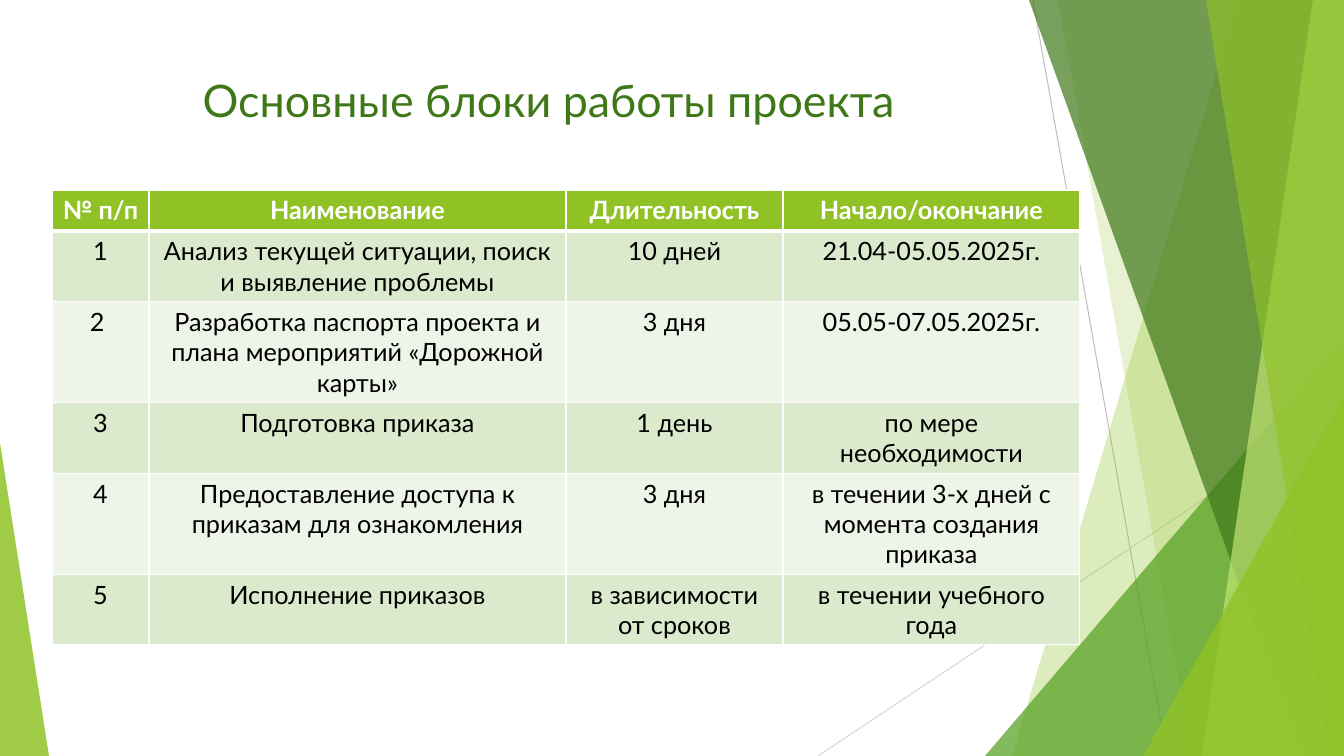
from lxml import etree
from pptx import Presentation
from pptx.dml.color import RGBColor
from pptx.enum.shapes import MSO_CONNECTOR, MSO_SHAPE
from pptx.enum.text import MSO_ANCHOR, MSO_AUTO_SIZE, PP_ALIGN
from pptx.oxml.ns import qn
from pptx.util import Pt

STRAIGHT = MSO_CONNECTOR.STRAIGHT
TRIANGLE = MSO_SHAPE.ISOSCELES_TRIANGLE
TOP = MSO_ANCHOR.TOP
NO_FIT = MSO_AUTO_SIZE.NONE
CENTER = PP_ALIGN.CENTER

SLIDE_WIDTH, SLIDE_HEIGHT = 1344, 756
SCALE = 12192000 / SLIDE_WIDTH
FONT = "Lato"
COLORS = {
    "lime": "90C226",
    "pale_lime": "C0E474",
    "green": "54A021",
    "dark_green": "3F7819",
    "odd_row": "DBE9CD",
    "even_row": "EEF4E8",
    "white": "FFFFFF",
    "black": "000000",
    "gray": "BFBFBF",
    "light_gray": "D9D9D9",
}

HEADERS = ["№ п/п", "Наименование", "Длительность", "Начало/окончание"]
STAGES = [
    ["1", "Анализ текущей ситуации, поиск и выявление проблемы", "10 дней", "21.04-05.05.2025г."],
    ["2 ", "Разработка паспорта проекта и плана мероприятий «Дорожной карты»", "3 дня", "05.05-07.05.2025г."],
    ["3", "Подготовка приказа", "1 день", "по мере необходимости"],
    ["4", "Предоставление доступа к приказам для ознакомления", "3 дня", "в течении 3-х дней с момента создания приказа"],
    ["5", "Исполнение приказов", "в зависимости от сроков", "в течении учебного года"],
]
COLUMN_WIDTHS = [97, 417, 217, 297]
ROW_HEIGHTS = [41, 70, 101, 70, 101, 70]


def px(length):
    """Turn pixels into EMU."""
    return round(length * SCALE)


def color(name):
    """Return the named colour."""
    return RGBColor.from_string(COLORS[name])


def style_facet(shape, fill, opacity):
    """Give a facet a translucent fill without line or shadow."""
    shape.shadow.inherit = False
    shape.line.fill.background()
    shape.fill.solid()
    shape.fill.fore_color.rgb = color(fill)
    fill_color = shape.fill._xPr.find(qn("a:solidFill"))[0]
    etree.SubElement(fill_color, qn("a:alpha"), val=str(opacity * 1000))


def add_thin_line(slide, start, end, line_color):
    """Draw a thin background line."""
    line = slide.shapes.add_connector(STRAIGHT, *map(px, start + end))
    line.line.color.rgb = color(line_color)
    line.line.width = Pt(0.75)
    etree.SubElement(line._element.spPr, qn("a:effectLst"))


def add_band(slide, box, top_x, bottom_x, fill, opacity):
    """Fill the area between a slanted edge and the right side of the box."""
    left, top, width, height = box
    right, bottom = left + width, top + height
    builder = slide.shapes.build_freeform(left + top_x, top, scale=SCALE)
    builder.add_line_segments([(right, top), (right, bottom), (left + bottom_x, bottom)])
    style_facet(builder.convert_to_shape(), fill, opacity)


def add_corner(slide, box, left, width, height, apex, fill, opacity):
    """Stand a right triangle on the bottom of the box."""
    top = box[1] + box[3] - height
    triangle = slide.shapes.add_shape(TRIANGLE, *map(px, (box[0] + left, top, width, height)))
    triangle.adjustments[0] = apex
    style_facet(triangle, fill, opacity)


def add_backdrop(slide, box):
    """Build the faceted green backdrop."""
    left, top, width, height = box
    right, bottom = left + width, top + height
    add_thin_line(slide, (left + 1033, top), (left + 1167, bottom), "gray")
    add_thin_line(slide, (right, top + 406), (left + 818, bottom), "light_gray")
    add_band(slide, box, 1238, 1012, "lime", 30)
    add_band(slide, box, 1058, 1192, "lime", 20)
    add_corner(slide, box, 985, 359, 420, 1, "green", 72)
    add_band(slide, box, 1029, 1301, "dark_green", 70)
    add_band(slide, box, 1313, 1202, "pale_lime", 70)
    add_band(slide, box, 1206, 1329, "lime", 65)
    add_corner(slide, box, 1143, 201, 360, 1, "lime", 80)
    add_corner(slide, box, 0, 49, 313, 0, "lime", 85)


def format_paragraph(paragraph, size, text_color, bold=False):
    """Centre a paragraph and set its font."""
    paragraph.alignment = CENTER
    paragraph.font.name = FONT
    paragraph.font.size = Pt(size)
    paragraph.font.bold = bold
    paragraph.font.color.rgb = color(text_color)


def add_title(slide, box):
    """Place the slide title in its placeholder."""
    title = slide.shapes.title
    title.left, title.top, title.width, title.height = map(px, box)
    frame = title.text_frame
    frame.text = "Основные блоки работы проекта"
    frame.word_wrap = True
    frame.auto_size = NO_FIT
    frame.vertical_anchor = TOP
    format_paragraph(frame.paragraphs[0], 32, "dark_green")


def add_borders(cell, widths):
    """Draw white cell borders, with widths in points by side."""
    properties = cell._tc.get_or_add_tcPr()
    for side, width in widths.items():
        border = etree.SubElement(properties, qn(f"a:ln{side}"), w=str(Pt(width)))
        fill = etree.SubElement(border, qn("a:solidFill"))
        etree.SubElement(fill, qn("a:srgbClr"), val=COLORS["white"])


def add_stage_table(slide, box):
    """Build the table of project stages."""
    rows = [HEADERS] + STAGES
    frame = slide.shapes.add_table(len(rows), len(HEADERS), *map(px, box))
    table = frame.table
    for column, width in zip(table.columns, COLUMN_WIDTHS):
        column.width = px(width)
    for index, (row, height, texts) in enumerate(zip(table.rows, ROW_HEIGHTS, rows)):
        row.height = px(height)
        is_header = index == 0
        fill = "lime" if is_header else "odd_row" if index % 2 else "even_row"
        widths = {"L": 1, "R": 1, "T": 3 if index == 1 else 1, "B": 3 if is_header else 1}
        for cell, text in zip(row.cells, texts):
            cell.text = text
            add_borders(cell, widths)
            cell.fill.solid()
            cell.fill.fore_color.rgb = color(fill)
            text_color = "white" if is_header else "black"
            format_paragraph(cell.text_frame.paragraphs[0], 18, text_color, is_header)


def main():
    """Build and save the presentation."""
    presentation = Presentation()
    presentation.slide_width = px(SLIDE_WIDTH)
    presentation.slide_height = px(SLIDE_HEIGHT)
    slide = presentation.slides.add_slide(presentation.slide_layouts[5])
    add_backdrop(slide, (0, 0, SLIDE_WIDTH, SLIDE_HEIGHT))
    add_title(slide, (75, 68, 948, 81))
    add_stage_table(slide, (52, 190, sum(COLUMN_WIDTHS), sum(ROW_HEIGHTS)))
    presentation.save("out.pptx")


if __name__ == "__main__":
    main()
